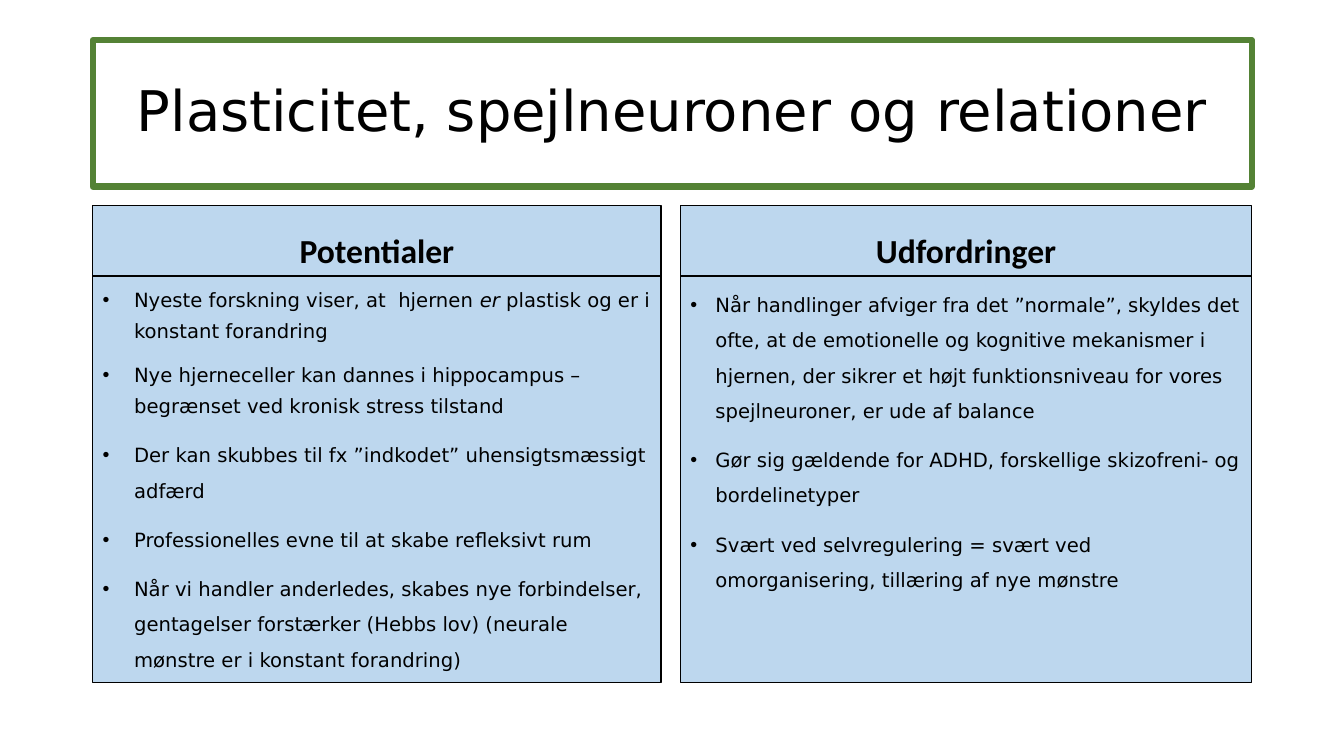
from lxml import etree
from pptx import Presentation
from pptx.dml.color import RGBColor
from pptx.enum.text import MSO_ANCHOR, MSO_AUTO_SIZE, PP_ALIGN
from pptx.oxml.ns import qn
from pptx.util import Pt

TOP, MIDDLE, BOTTOM = MSO_ANCHOR.TOP, MSO_ANCHOR.MIDDLE, MSO_ANCHOR.BOTTOM
LEFT, CENTER = PP_ALIGN.LEFT, PP_ALIGN.CENTER
FIXED = MSO_AUTO_SIZE.NONE

COLORS = {"text": "000000", "edge": "000000", "panel": "BDD7EE", "frame": "548235"}
FONTS = {
    "title": {"name": "DejaVu Sans", "size": Pt(40), "bold": False},
    "head": {"name": "Calibri", "size": Pt(24), "bold": True},
    "body": {"name": "DejaVu Sans", "size": Pt(14), "bold": False},
}
HEAD_TOP, HEAD_HIGH = 146.9, 50.4
BODY_TOP, BODY_HIGH = 197.3, 290.2

COLUMNS = [
    (66.2, 406.1, 22.5, "Potentialer", [
        (1.3, ["Nyeste forskning viser, at  hjernen ", "er ",
               "plastisk og er i konstant forandring"]),
        (1.3, ["Nye hjerneceller kan dannes i hippocampus – begrænset ved kronisk stress tilstand"]),
        (1.5, ["Der kan skubbes til fx ”indkodet” uhensigtsmæssigt adfærd"]),
        (1.5, ["Professionelles evne til at skabe refleksivt rum"]),
        (1.5, ["Når vi handler anderledes, skabes nye forbindelser, gentagelser forstærker "
               "(Hebbs lov) (neurale mønstre er i konstant forandring)"]),
    ]),
    (486, 408.2, 18, "Udfordringer", [
        (1.5, ["Når handlinger afviger fra det ”normale”, skyldes det ofte, at de emotionelle "
               "og kognitive mekanismer i hjernen, der sikrer et højt funktionsniveau for "
               "vores spejlneuroner, er ude af balance"]),
        (1.5, ["Gør sig gældende for ADHD, forskellige skizofreni- og bordelinetyper"]),
        (1.5, ["Svært ved selvregulering = svært ved omorganisering, tillæring af nye mønstre"]),
    ]),
]


def set_box(shape, box, edge, width, anchor):
    for name, value in zip(("left", "top", "width", "height"), box):
        setattr(shape, name, Pt(value))
    shape.line.color.rgb = RGBColor.from_string(COLORS[edge])
    shape.line.width = Pt(width)
    frame = shape.text_frame
    frame.word_wrap = True
    frame.auto_size = FIXED
    frame.vertical_anchor = anchor
    return frame


def write(para, parts, style, align, spacing, before):
    para.alignment = align
    para.line_spacing = spacing
    para.space_before = Pt(before)
    for index, text in enumerate(parts):
        run = para.add_run()
        run.text = text
        for name, value in FONTS[style].items():
            setattr(run.font, name, value)
        run.font.italic = index == 1
        run.font.color.rgb = RGBColor.from_string(COLORS["text"])


prs = Presentation()
prs.slide_width, prs.slide_height = Pt(960), Pt(540)
slide = prs.slides.add_slide(prs.slide_layouts[5])

frame = set_box(slide.shapes.title, (66.2, 28.8, 828, 104.4), "frame", 4.5, MIDDLE)
write(frame.paragraphs[0], ["Plasticitet, spejlneuroner og relationer"], "title", CENTER, 0.9, 0)

for left, width, indent, head, items in COLUMNS:
    panels = [
        (HEAD_TOP, HEAD_HIGH, BOTTOM, "head", CENTER, [(0.9, [head])]),
        (BODY_TOP, BODY_HIGH, TOP, "body", LEFT, items),
    ]
    for top, high, anchor, style, align, paras in panels:
        box = (left, top, width, high)
        shape = slide.shapes.add_textbox(*map(Pt, box))
        shape.fill.solid()
        shape.fill.fore_color.rgb = RGBColor.from_string(COLORS["panel"])
        frame = set_box(shape, box, "edge", 1, anchor)
        for index, (spacing, parts) in enumerate(paras):
            para = frame.add_paragraph() if index else frame.paragraphs[0]
            write(para, parts, style, align, spacing, 10)
            if style == "body":
                props = para._p.get_or_add_pPr()
                props.set("marL", str(Pt(indent)))
                props.set("indent", str(-Pt(indent)))
                etree.SubElement(props, qn("a:buFont")).set("typeface", "Arial")
                etree.SubElement(props, qn("a:buChar")).set("char", "•")

prs.save("out.pptx")
